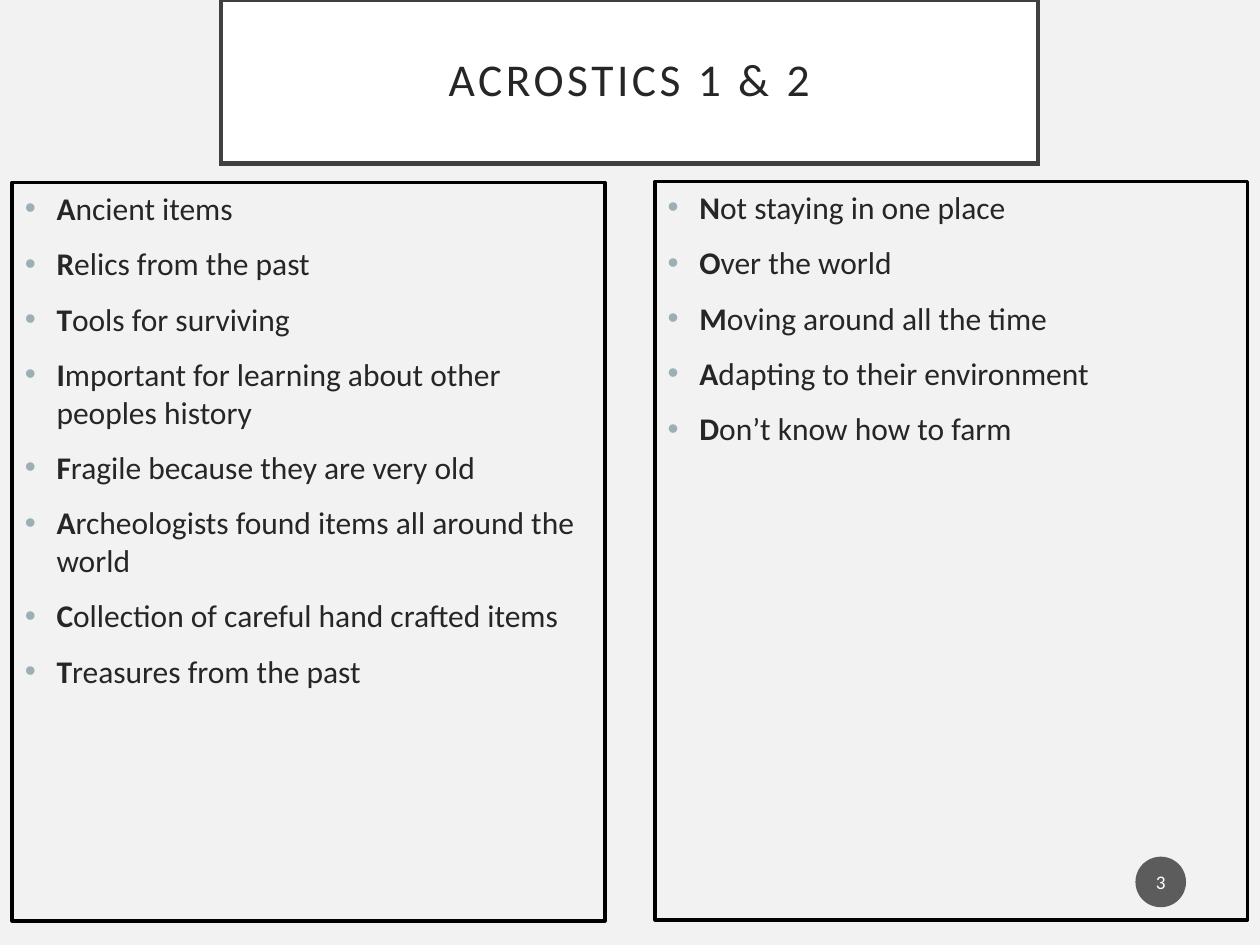
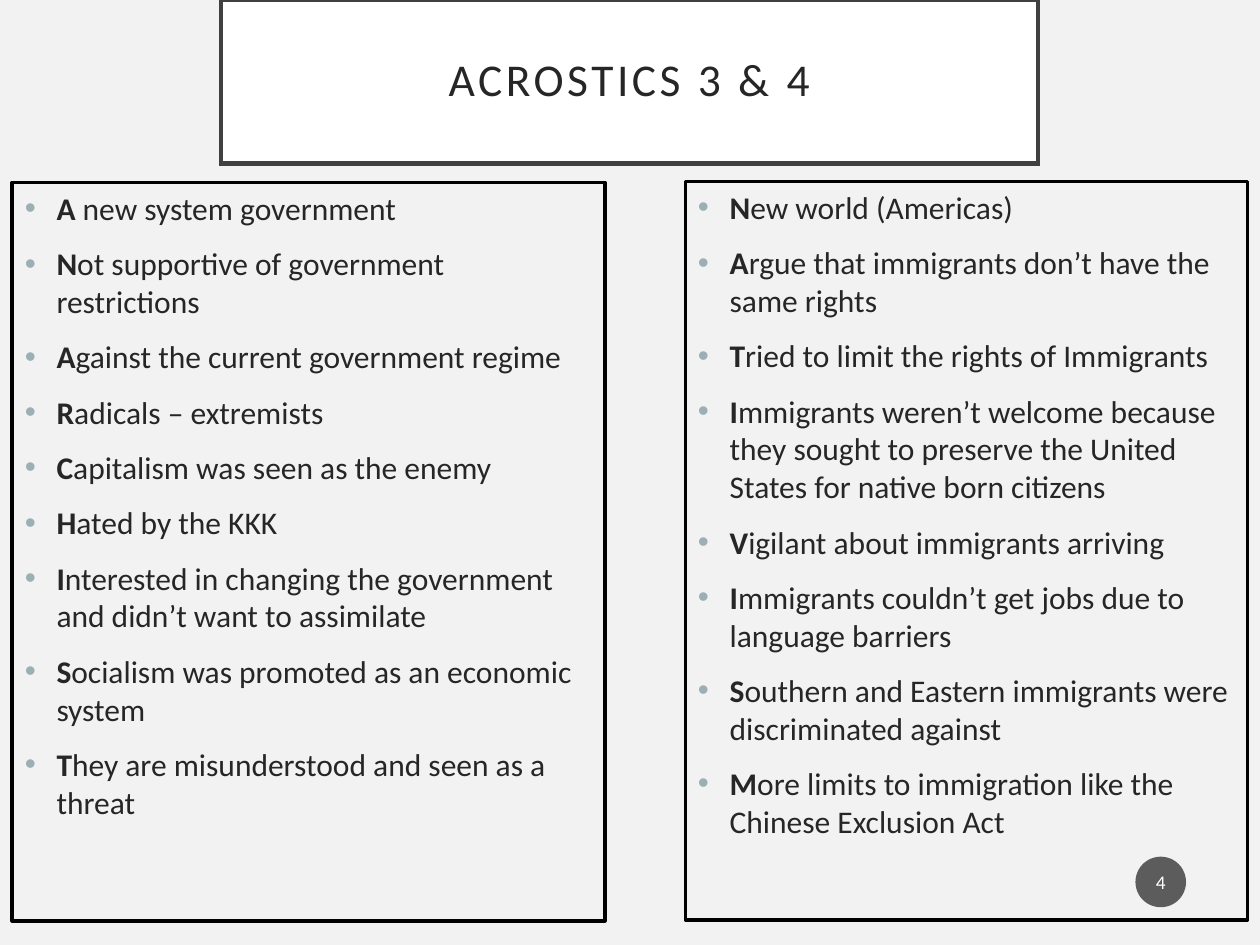
"""Build two slides that each pair a left and a right acrostic."""
from lxml import etree
from pptx import Presentation
from pptx.dml.color import RGBColor
from pptx.enum.shapes import MSO_SHAPE
from pptx.enum.text import MSO_ANCHOR, PP_ALIGN
from pptx.oxml.ns import qn
from pptx.util import Cm, Pt

RECTANGLE, OVAL = MSO_SHAPE.RECTANGLE, MSO_SHAPE.OVAL
TOP, MIDDLE = MSO_ANCHOR.TOP, MSO_ANCHOR.MIDDLE
LEFT, CENTER = PP_ALIGN.LEFT, PP_ALIGN.CENTER

BACKGROUND = RGBColor(0xF2, 0xF2, 0xF2)
WHITE = RGBColor(0xFF, 0xFF, 0xFF)
BLACK = RGBColor(0, 0, 0)
TITLE_BORDER = RGBColor(0x40, 0x40, 0x40)
TEXT = RGBColor(0x26, 0x26, 0x26)
BULLET = RGBColor(0x9B, 0xAF, 0xB5)
BADGE = RGBColor(0x1D, 0x1D, 0x1D)

FONT = "Calibri"
RIGHT_EDGE = 25.15
PANEL_HEIGHT = 14.88

SLIDES = [
    ("ACROSTICS 1 & 2", "3", 13.21,
     ["Ancient items",
      "Relics from the past",
      "Tools for surviving",
      "Important for learning about other peoples history",
      "Fragile because they are very old",
      "Archeologists found items all around the world",
      "Collection of careful hand crafted items",
      "Treasures from the past"],
     ["Not staying in one place",
      "Over the world",
      "Moving around all the time",
      "Adapting to their environment",
      "Don’t know how to farm"]),
    ("ACROSTICS 3 & 4", "4", 13.82,
     ["A new system government",
      "Not supportive of government restrictions",
      "Against the current government regime",
      "Radicals – extremists",
      "Capitalism was seen as the enemy",
      "Hated by the KKK",
      "Interested in changing the government and didn’t want to assimilate",
      "Socialism was promoted as an economic system",
      "They are misunderstood and seen as a threat"],
     ["New world (Americas)",
      "Argue that immigrants don’t have the same rights",
      "Tried to limit the rights of Immigrants",
      "Immigrants weren’t welcome because they sought to preserve the United States "
      "for native born citizens",
      "Vigilant about immigrants arriving",
      "Immigrants couldn’t get jobs due to language barriers",
      "Southern and Eastern immigrants were discriminated against",
      "More limits to immigration like the Chinese Exclusion Act"]),
]


def add_box(slide, kind, box, fill, border, border_width, margins, anchor):
    shape = slide.shapes.add_shape(kind, *(Cm(length) for length in box))
    shape.shadow.inherit = False
    if fill is None:
        shape.fill.background()
    else:
        shape.fill.solid()
        shape.fill.fore_color.rgb = fill
    if border is None:
        shape.line.fill.background()
    else:
        shape.line.color.rgb = border
        shape.line.width = Pt(border_width)
    frame = shape.text_frame
    frame.word_wrap = True
    frame.vertical_anchor = anchor
    frame.margin_left = frame.margin_right = Cm(margins[0])
    frame.margin_top = frame.margin_bottom = Cm(margins[1])
    return shape


def format_runs(paragraph, size, color, alignment):
    paragraph.alignment = alignment
    for run in paragraph.runs:
        run.font.name = FONT
        run.font.size = Pt(size)
        run.font.color.rgb = color


presentation = Presentation()
presentation.slide_width = Cm(25.4)
presentation.slide_height = Cm(19.05)

for title, number, right_start, left_lines, right_lines in SLIDES:
    slide = presentation.slides.add_slide(presentation.slide_layouts[6])
    slide.background.fill.solid()
    slide.background.fill.fore_color.rgb = BACKGROUND

    title_box = add_box(slide, RECTANGLE, (4.45, 0, 16.48, 3.3), WHITE,
                        TITLE_BORDER, 2.5, (0.51, 0.51), MIDDLE)
    etree.SubElement(title_box.line._get_or_add_ln(), qn("a:miter"), lim="800000")
    title_box.text_frame.text = title
    paragraph = title_box.text_frame.paragraphs[0]
    paragraph.line_spacing = 0.9
    format_runs(paragraph, 26, TEXT, CENTER)
    paragraph.runs[0]._r.get_or_add_rPr().set("spc", "200")

    panels = [(0.25, 3.68, 11.94, left_lines),
              (right_start, 3.66, RIGHT_EDGE - right_start, right_lines)]
    for left, top, width, lines in panels:
        panel = add_box(slide, RECTANGLE, (left, top, width, PANEL_HEIGHT), None,
                        BLACK, 2.25, (0.25, 0.13), TOP)
        panel.text_frame.text = "\n".join(lines)
        for paragraph, line in zip(panel.text_frame.paragraphs, lines):
            initial = paragraph.runs[0]
            initial.text = line[0]
            initial.font.bold = True
            paragraph.add_run().text = line[1:]
            format_runs(paragraph, 18, TEXT, LEFT)
            paragraph.space_before = Pt(10)
            properties = paragraph._p.get_or_add_pPr()
            properties.set("marL", str(Cm(0.64)))
            properties.set("indent", str(-Cm(0.64)))
            bullet_color = etree.SubElement(properties, qn("a:buClr"))
            etree.SubElement(bullet_color, qn("a:srgbClr"), val=str(BULLET))
            etree.SubElement(properties, qn("a:buFont"), typeface="Arial")
            etree.SubElement(properties, qn("a:buChar"), char="•")

    badge = add_box(slide, OVAL, (22.89, 17.27, 1.02, 1.02), BADGE,
                    None, 0, (0.05, 0.13), MIDDLE)
    badge_color = badge._element.spPr.find(qn("a:solidFill")).find(qn("a:srgbClr"))
    etree.SubElement(badge_color, qn("a:alpha"), val="70000")
    badge.text_frame.text = number
    format_runs(badge.text_frame.paragraphs[0], 11, WHITE, CENTER)

presentation.save("out.pptx")
